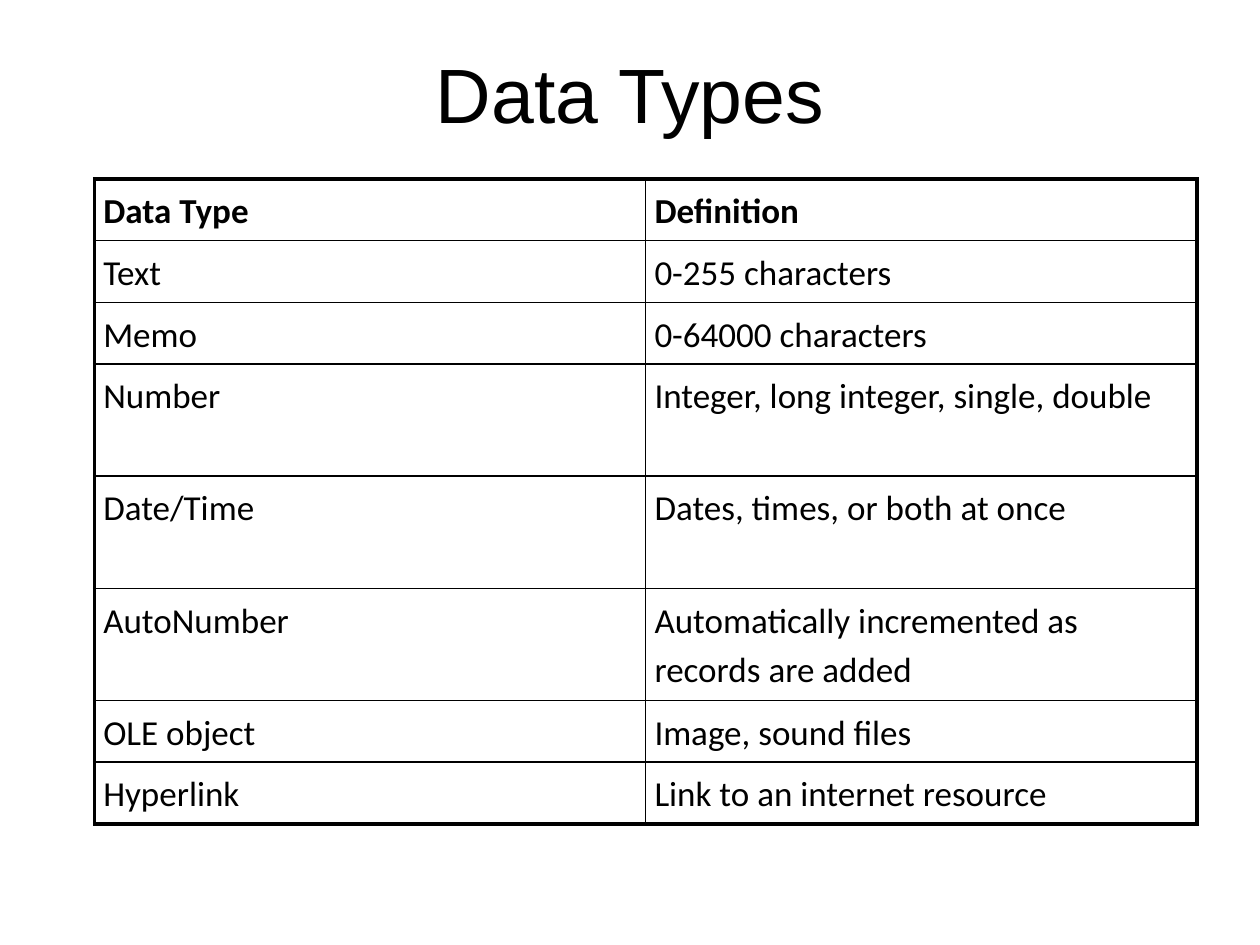
from dataclasses import dataclass

from lxml import etree
from pptx import Presentation
from pptx import util as u
from pptx.dml.color import RGBColor
from pptx.enum import text
from pptx.oxml.ns import qn


@dataclass(frozen=True)
class Theme:
    ink: str = "000000"
    title_font: str = "Arial"
    table_font: str = "Calibri"
    title_size: int = 44
    table_size: int = 20
    outer_line: float = 2.25
    inner_line: float = 1


THEME = Theme()
WIDTH, HEIGHT = u.Inches(10), u.Inches(7.5)

TITLE = "Data Types"
ROWS = [
    ("Data Type", "Definition"),
    ("Text", "0-255 characters"),
    ("Memo", "0-64000 characters"),
    ("Number", "Integer, long integer, single, double"),
    ("Date/Time", "Dates, times, or both at once"),
    ("AutoNumber", "Automatically incremented as records are added"),
    ("OLE object", "Image, sound files"),
    ("Hyperlink", "Link to an internet resource"),
]
TALL_ROWS = {"Number", "Date/Time", "AutoNumber"}
ROW_HEIGHT, TALL_HEIGHT = u.Inches(0.49), u.Inches(0.89)


def style_font(font, name, size, bold=False):
    font.name, font.size, font.bold = name, u.Pt(size), bold
    font.color.rgb = RGBColor.from_string(THEME.ink)


def set_borders(cell, outer_sides):
    """Draw four borders, heavier on the sides that lie on the table's edge."""
    props = cell._tc.get_or_add_tcPr()
    for i, side in enumerate("LRTB"):
        width = THEME.outer_line if side in outer_sides else THEME.inner_line
        line = etree.Element(qn(f"a:ln{side}"), w=str(u.Pt(width)))
        fill = etree.SubElement(line, qn("a:solidFill"))
        etree.SubElement(fill, qn("a:srgbClr"), val=THEME.ink)
        props.insert(i, line)


def add_title(slide, box):
    sp = slide.shapes.title
    sp.left, sp.top, sp.width, sp.height = box
    tf = sp.text_frame
    tf.text = TITLE
    tf.vertical_anchor = text.MSO_ANCHOR.MIDDLE
    p = tf.paragraphs[0]
    p.alignment = text.PP_ALIGN.CENTER
    style_font(p.font, THEME.title_font, THEME.title_size)


def fill_cell(cell, words, bold):
    cell.fill.background()
    cell.margin_left = cell.margin_right = u.Inches(0.07)
    cell.margin_top = cell.margin_bottom = u.Inches(0.04)
    cell.text = words
    p = cell.text_frame.paragraphs[0]
    p.line_spacing, p.space_after = 1.15, u.Pt(10)
    style_font(p.font, THEME.table_font, THEME.table_size, bold)


def add_types_table(slide, box):
    n_rows, n_cols = len(ROWS), len(ROWS[0])
    table = slide.shapes.add_table(n_rows, n_cols, *box).table
    table.horz_banding = False
    for col in table.columns:
        col.width = box[2] // n_cols
    for r, row in enumerate(ROWS):
        table.rows[r].height = TALL_HEIGHT if row[0] in TALL_ROWS else ROW_HEIGHT
        for c, words in enumerate(row):
            cell = table.cell(r, c)
            fill_cell(cell, words, bold=r == 0)
            edges = {"L": c == 0, "R": c == n_cols - 1,
                     "T": r == 0, "B": r == n_rows - 1}
            set_borders(cell, [side for side, outer in edges.items() if outer])


def main():
    prs = Presentation()
    prs.slide_width, prs.slide_height = WIDTH, HEIGHT
    slide = prs.slides.add_slide(prs.slide_layouts[5])

    # Title across the top
    add_title(slide, (int(WIDTH * 0.05), int(HEIGHT * 0.04),
                      int(WIDTH * 0.9), u.Inches(0.87)))

    # Table of types and their definitions
    height = sum(TALL_HEIGHT if row[0] in TALL_ROWS else ROW_HEIGHT for row in ROWS)
    add_types_table(slide, (u.Inches(0.75), u.Inches(1.42), u.Inches(8.75), height))

    prs.save("out.pptx")


if __name__ == "__main__":
    main()
